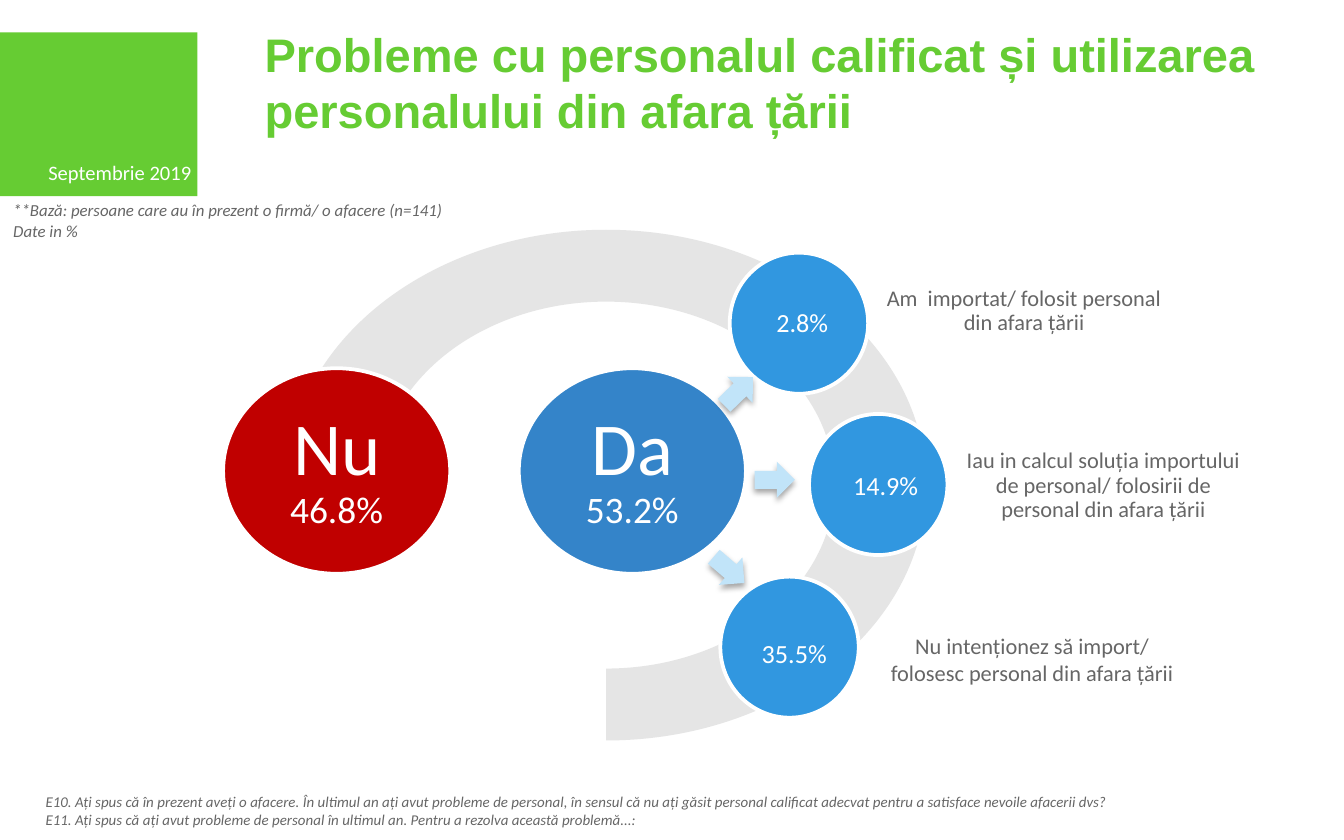
import math

from lxml import etree
from pptx import Presentation
from pptx.dml.color import RGBColor
from pptx.enum.shapes import MSO_SHAPE
from pptx.enum.text import MSO_ANCHOR, PP_ALIGN
from pptx.oxml.ns import qn
from pptx.util import Inches, Pt

RECT, OVAL, ARROW = MSO_SHAPE.RECTANGLE, MSO_SHAPE.OVAL, MSO_SHAPE.DOWN_ARROW
LEFT, CENTER, RIGHT = PP_ALIGN.LEFT, PP_ALIGN.CENTER, PP_ALIGN.RIGHT
TOP, MIDDLE, BOTTOM = MSO_ANCHOR.TOP, MSO_ANCHOR.MIDDLE, MSO_ANCHOR.BOTTOM

COLORS = {
    "green": "66CC33", "white": "FFFFFF", "grey": "666666", "ring": "E5E5E5",
    "option": "3197E0", "yes": "3484C9", "no": "C00000", "arrow": "C1E4F9",
    "shadow": "000000",
}
COLUMNS, ROWS = 100, 62.5
CELL = Inches(0.1)

OPTIONS = [
    {"box": (54.3, 18.8, 10.3, 10.5), "share": "2.8%", "share_at": (1.7, 3.5),
     "label": "Am  importat/ folosit personal din afara țării",
     "label_at": (10.2, -0.6), "spacing": 0.9,
     "arrow_at": (-0.7, 8.8), "turn": 225.7},
    {"box": (60.2, 30.8, 10.3, 10.5), "share": "14.9%", "share_at": (2, 3.6),
     "label": "Iau in calcul soluția importului de personal/ folosirii de "
              "personal din afara țării",
     "label_at": (10.2, 0.4), "spacing": 0.9,
     "arrow_at": (-3.9, 3.4), "turn": 270},
    {"box": (53.6, 42.9, 10.3, 10.5), "share": "35.5%", "share_at": (1.8, 4),
     "label": "Nu intenționez să import/ folosesc personal din afara țării",
     "label_at": (11.5, 1.2), "spacing": 1,
     "arrow_at": (-0.7, -2), "turn": 310.6},
]


def color(name):
    """Return a palette colour."""
    return RGBColor.from_string(COLORS[name])


def within(box, column, row, columns, rows):
    """Return a box in grid cells, offset from the corner of another box."""
    return box[0] + column, box[1] + row, columns, rows


def lengths(cells):
    """Convert grid cells to slide lengths."""
    return [round(cell * CELL) for cell in cells]


def paint(shape, fill=None, line=None):
    """Give a shape an optional fill and outline and no shadow."""
    shape.shadow.inherit = False
    if fill:
        shape.fill.solid()
        shape.fill.fore_color.rgb = color(fill)
    else:
        shape.fill.background()
    if line:
        shape.line.color.rgb = color(line)
        shape.line.width = Pt(2)
    else:
        shape.line.fill.background()
    return shape


def add_preset(slide, kind, box, fill, line=None):
    """Add a painted preset shape."""
    return paint(slide.shapes.add_shape(kind, *lengths(box)), fill, line)


def add_outline(slide, start, segments, fill=None, line=None):
    """Add a closed outline of lines (one point) and curves (three points)."""
    builder = slide.shapes.build_freeform(*lengths(start))
    builder.add_line_segments([lengths(points[-1]) for points in segments])
    shape = builder.convert_to_shape()
    for step, points in zip(list(shape.element.iter(qn("a:lnTo"))), segments):
        if len(points) == 3:
            step.tag = qn("a:cubicBezTo")
            step.clear()
            for x, y in map(lengths, points):
                etree.SubElement(step, qn("a:pt"), x=str(x - shape.left),
                                 y=str(y - shape.top))
    return paint(shape, fill, line)


def arc(center, radii, *angles):
    """Return curve segments through the given angles of an ellipse."""
    def spot(angle, reach=0):
        """Return a point on the ellipse, moved along its tangent."""
        cos, sin = math.cos(angle), math.sin(angle)
        return (center[0] + radii[0] * (cos - reach * sin),
                center[1] + radii[1] * (sin + reach * cos))

    turns = [math.radians(angle) for angle in angles]
    segments = []
    for start, end in zip(turns, turns[1:]):
        reach = 4 / 3 * math.tan((end - start) / 4)
        segments.append([spot(start, reach), spot(end, -reach), spot(end)])
    return segments


def style(run, size, ink, font="Calibri", bold=False, italic=False):
    """Format one run."""
    run.font.name, run.font.size = font, Pt(size)
    run.font.bold, run.font.italic = bold, italic
    run.font.color.rgb = color(ink)


def set_frame(frame, anchor, side, end, wrap=True):
    """Set the anchor, wrapping and margins in inches of a text frame."""
    frame.vertical_anchor, frame.word_wrap = anchor, wrap
    frame.margin_left = frame.margin_right = Inches(side)
    frame.margin_top = frame.margin_bottom = Inches(end)


def write(frame, text, size, ink, align=LEFT, spacing=1, **look):
    """Fill a text frame with text of one look."""
    frame.text = text
    for paragraph in frame.paragraphs:
        paragraph.alignment, paragraph.line_spacing = align, spacing
        for run in paragraph.runs:
            style(run, size, ink, **look)


def add_text(slide, box, text, size, ink, align=LEFT, anchor=TOP,
             insets=(0.1, 0.05), wrap=True, **look):
    """Add a text box."""
    frame = slide.shapes.add_textbox(*lengths(box)).text_frame
    set_frame(frame, anchor, *insets, wrap)
    write(frame, text, size, ink, align, **look)


def add_header(slide, box):
    """Place the dated green block and the title."""
    add_preset(slide, RECT, within(box, 0, 0, 14.7, 12.2), "green")
    add_text(slide, within(box, 1.4, 9.5, 12.85, 1.9), "Septembrie 2019", 11,
             "white", RIGHT, MIDDLE, (0, 0))
    add_text(slide, within(box, 18.7, 2.15, 78.8, 6.2),
             "Probleme cu personalul calificat și utilizarea personalului "
             "din afara țării", 25.2, "green", anchor=BOTTOM, font="Arial",
             bold=True)


def add_notes(slide, box):
    """Place the sample base above and the survey questions below."""
    add_text(slide, within(box, 0, 0, 34.1, 4),
             "**Bază: persoane care au în prezent o firmă/ o afacere (n=141) "
             "Date in %", 9, "grey", italic=True)
    add_text(slide, within(box, 2.4, box[3] - 4, 81.9, 3.7),
             "E10. Ați spus că în prezent aveți o afacere. În ultimul an ați "
             "avut probleme de personal, în sensul că nu ați găsit personal "
             "calificat adecvat pentru a satisface nevoile afacerii dvs?\n"
             "E11. Ați spus că ați avut probleme de personal în ultimul an. "
             "Pentru a rezolva această problemă...:", 8, "grey", wrap=False,
             italic=True)


def add_ring_arrow(slide, box):
    """Place the grey arrow that sweeps round to the left."""
    left, top, width, height = box
    center = (left + 26.3, top + height / 2)
    outer = arc(center, (width - 26.3, height / 2), 90, 0, -90, -168)
    head = [[(left + column, top + row)] for column, row in
            ((0, 14.4), (4.3, 20.7), (12.1, 17), (9.6, 16.5))]
    inner = arc(center, (17, 13.65), -169.5, -90, 0, 90)
    add_outline(slide, (center[0], top + height), outer + head + inner, "ring")


def add_verdict(slide, box, answer, share, fill):
    """Place a large circle with an answer and its share."""
    left, top, width, height = box
    center = (left + width / 2, top + height / 2)
    circle = arc(center, (width / 2, height / 2), 180, 270, 360, 450, 540)
    frame = add_outline(slide, (left, center[1]), circle, fill,
                        "white").text_frame
    set_frame(frame, MIDDLE, 0.33, 0.33)
    paragraph = frame.paragraphs[0]
    paragraph.alignment, paragraph.line_spacing = CENTER, 0.9
    for text, size in ((answer + " ", 40), (share, 20)):
        run = paragraph.add_run()
        run.text = text
        style(run, size, "white")


def add_label(slide, box, text, spacing):
    """Place the wording of an option in an unpainted outline."""
    left, top, width, height = box
    right, bottom = left + width, top + height
    sides = [[(right, top)], [(right, bottom)], [(left, bottom)], [(left, top)]]
    frame = add_outline(slide, (left, top), sides).text_frame
    set_frame(frame, MIDDLE, 0.08, 0.08)
    write(frame, text, 12, "grey", CENTER, spacing)


def cast_shadow(shape):
    """Give a shape a soft shadow straight below it."""
    effects = shape.element.spPr.find(qn("a:effectLst"))
    shadow = etree.SubElement(effects, qn("a:outerShdw"), blurRad=str(Pt(3.1)),
                              dist=str(Pt(1.8)), dir="5400000", rotWithShape="0")
    tint = etree.SubElement(shadow, qn("a:srgbClr"), val=COLORS["shadow"])
    etree.SubElement(tint, qn("a:alpha"), val="35000")


def add_option(slide, box, option):
    """Place a small circle with its share, label and incoming arrow."""
    add_preset(slide, OVAL, box, "option", "white")
    add_text(slide, within(box, *option["share_at"], 7.4, 3.4),
             option["share"], 14, "white", CENTER)
    add_label(slide, within(box, *option["label_at"], 23.4, 9.9),
              option["label"], option["spacing"])
    arrow = add_preset(slide, ARROW, within(box, *option["arrow_at"], 2.7, 3),
                       "arrow")
    arrow.rotation = option["turn"]
    cast_shadow(arrow)


def main():
    """Build the slide and save it."""
    deck = Presentation()
    deck.slide_width, deck.slide_height = lengths((COLUMNS, ROWS))
    slide = deck.slides.add_slide(deck.slide_layouts[6])
    add_header(slide, (0, 2.4, COLUMNS, 12.2))
    add_ring_arrow(slide, (18.8, 17.1, 50.1, 38))
    add_notes(slide, (0, 14.4, COLUMNS, ROWS - 14.4))
    add_verdict(slide, (38.6, 27.4, 16.9, 15.3), "Da", "53.2%", "yes")
    add_verdict(slide, (16.6, 27.4, 16.9, 15.3), "Nu", "46.8%", "no")
    for option in OPTIONS:
        add_option(slide, option["box"], option)
    deck.save("out.pptx")


if __name__ == "__main__":
    main()
